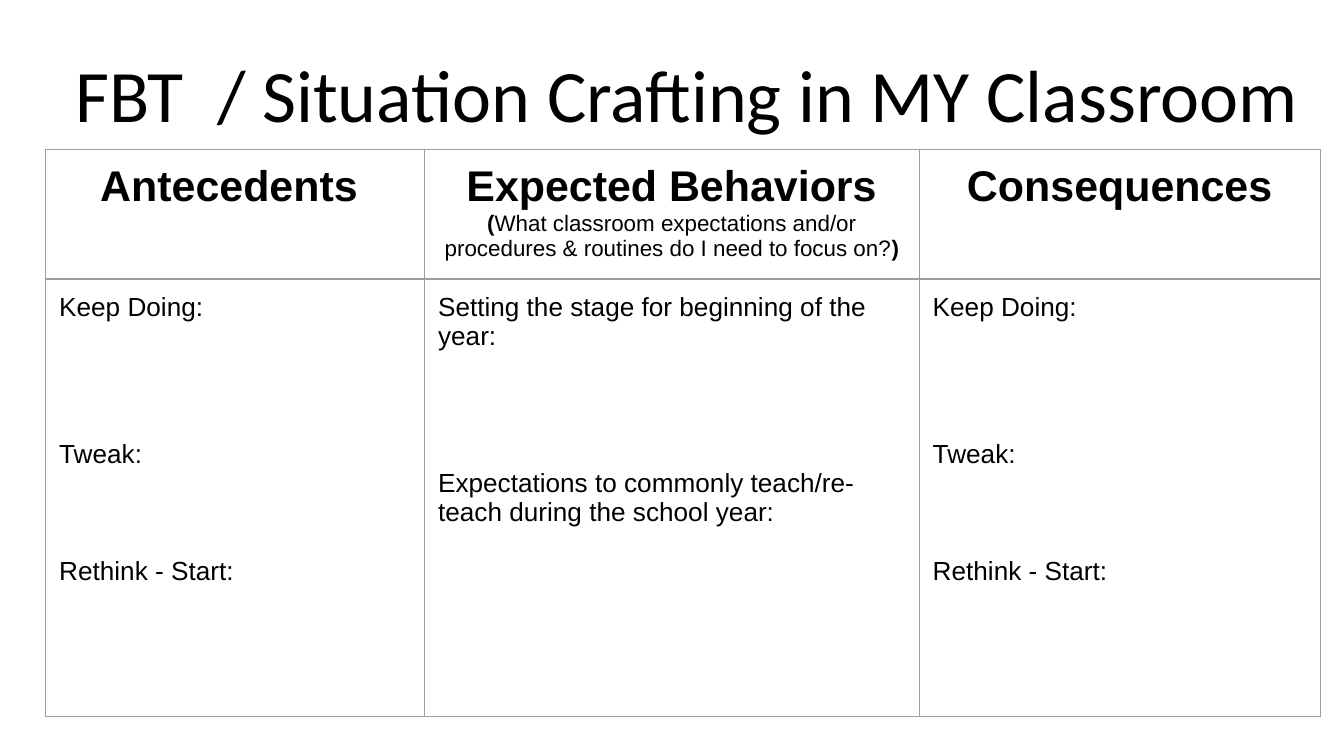
from pptx import Presentation
from pptx.dml.color import RGBColor
from pptx.enum.text import MSO_ANCHOR as Anchor, MSO_AUTO_SIZE as Auto, PP_ALIGN as Align
from pptx.oxml import parse_xml
from pptx.oxml.ns import nsdecls
from pptx.util import Pt


def paint(code):
    return RGBColor.from_string(code)


class Deck:
    ink = "000000"
    rule = "9E9E9E"
    inset = Pt(7.2)

    def __init__(self, wide, high):
        self.file = Presentation()
        self.file.slide_width, self.file.slide_height = Pt(wide), Pt(high)
        self.slide = self.file.slides.add_slide(self.file.slide_layouts[5])

    def pad(self, box):
        box.margin_left = box.margin_right = self.inset
        box.margin_top = box.margin_bottom = self.inset

    def style(self, para, size, face="Arial", bold=False, align=Align.LEFT):
        para.alignment = align
        font = para.font
        font.size, font.name, font.bold = Pt(size), face, bold
        font.color.rgb = paint(self.ink)

    def title(self, text, left, top, wide, high):
        shape = self.slide.shapes.title
        shape.left, shape.top = Pt(left), Pt(top)
        shape.width, shape.height = Pt(wide), Pt(high)
        frame = shape.text_frame
        frame.text = text
        frame.word_wrap = True
        frame.auto_size = Auto.NONE
        frame.vertical_anchor = Anchor.TOP
        self.pad(frame)
        self.style(frame.paragraphs[0], 39.6, "Calibri", align=Align.CENTER)

    def table(self, left, top, cols, rows):
        frame = self.slide.shapes.add_table(
            len(rows), len(cols), Pt(left), Pt(top), Pt(sum(cols)), Pt(sum(rows)))
        grid = frame.table
        grid.first_row = grid.horz_banding = False
        for col, wide in zip(grid.columns, cols):
            col.width = Pt(wide)
        for row, high in zip(grid.rows, rows):
            row.height = Pt(high)
        for cell in grid.iter_cells():
            cell.fill.background()
            self.pad(cell)
            self.edge(cell)
        return grid

    def edge(self, cell):
        props = cell._tc.get_or_add_tcPr()
        for spot, side in enumerate("LRTB"):
            props.insert(spot, parse_xml(
                f'<a:ln{side} {nsdecls("a")} w="{Pt(0.75)}"><a:solidFill>'
                f'<a:srgbClr val="{self.rule}"/></a:solidFill></a:ln{side}>'))

    def head(self, cell, text, note=()):
        para = cell.text_frame.paragraphs[0]
        para.text = text
        self.style(para, 23, bold=True, align=Align.CENTER)
        if note:
            para = cell.text_frame.add_paragraph()
            self.style(para, 12, align=Align.CENTER)
            for part, bold in note:
                run = para.add_run()
                run.text = part
                run.font.size, run.font.bold = Pt(12), bold

    def prompts(self, cell, items):
        frame = cell.text_frame
        for spot, (text, gap) in enumerate(items):
            para = frame.add_paragraph() if spot else frame.paragraphs[0]
            para.text = text
            self.style(para, 14)
            if gap:
                para.space_before = Pt(gap)


deck = Deck(720, 405)

# Title
deck.title("FBT  / Situation Crafting in MY Classroom", 24.5, 18.7, 687, 45.4)

# Planning table
grid = deck.table(24.5, 80, [203, 265, 215], [69.5, 234.5])

# Header row
note = [("(", True),
        ("What classroom expectations and/or procedures & routines "
         "do I need to focus on?", False),
        (")", True)]
heads = [("Antecedents ", ()), ("Expected Behaviors", note), ("Consequences", ())]
for col, (text, extra) in enumerate(heads):
    deck.head(grid.cell(0, col), text, extra)

# Prompts, each with the writing space above it
review = [("Keep Doing:", 0), ("Tweak:", 63), ("Rethink - Start:", 47)]
focus = [("Setting the stage for beginning of the year:", 0),
         ("Expectations to commonly teach/re-teach during the school year:", 63)]
for col, items in enumerate([review, focus, review]):
    deck.prompts(grid.cell(1, col), items)

deck.file.save("out.pptx")
